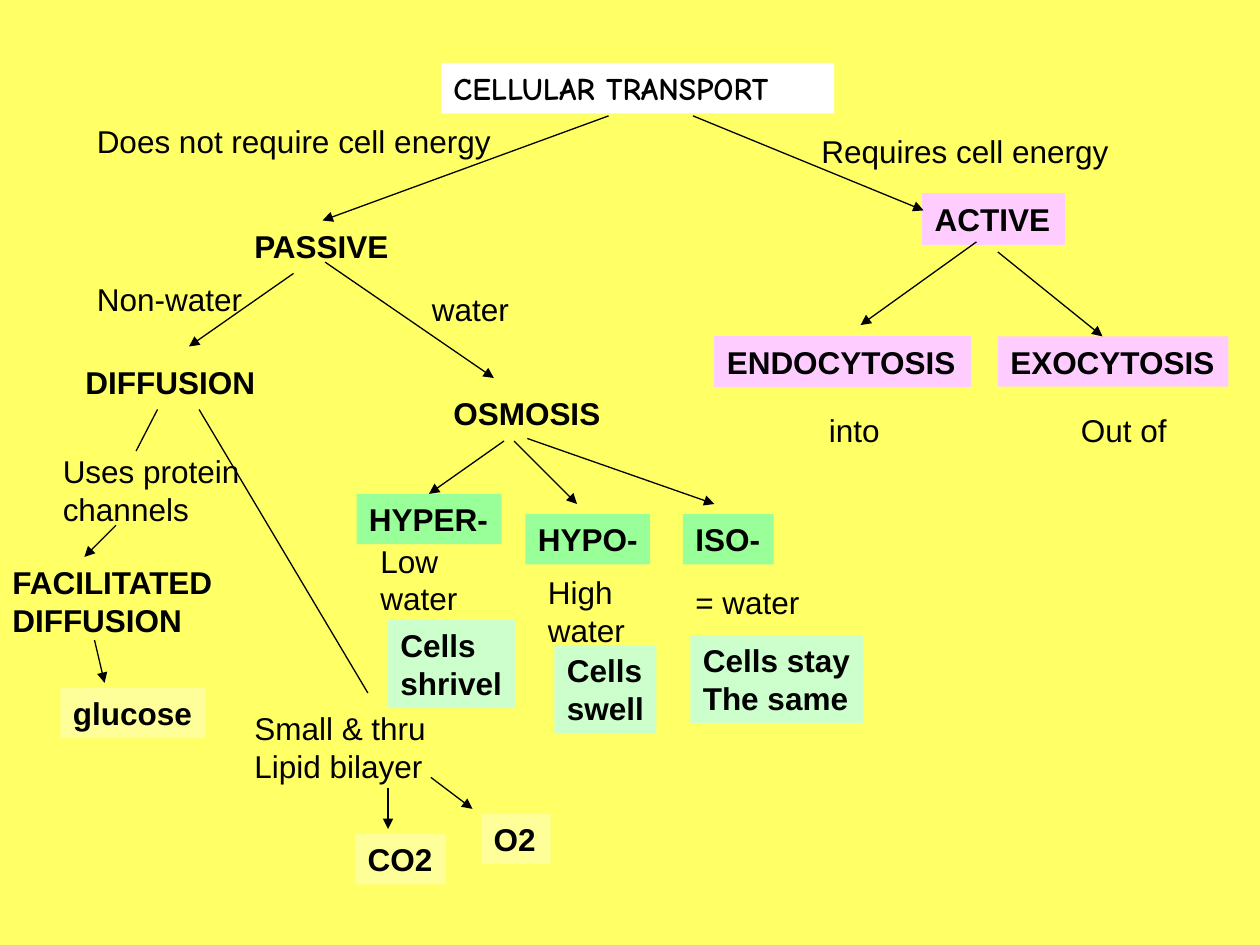
from collections import namedtuple

from lxml.etree import SubElement
from pptx import Presentation
from pptx.dml.color import RGBColor
from pptx.enum.shapes import MSO_CONNECTOR as Connector, MSO_SHAPE as Preset
from pptx.enum.text import MSO_ANCHOR as Anchor, MSO_AUTO_SIZE as AutoSize, PP_ALIGN as Align
from pptx.oxml.ns import qn
from pptx.util import Pt

PX = 9144  # one px is a hundredth of an inch
PAGE, WHITE, BLACK = "FFFF66", "FFFFFF", "000000"
PINK, GREEN, MINT, CREAM = "FFCCFF", "99FF99", "CCFFCC", "FFFF99"
LINE_HEIGHT, PADDING = 30, 10
TOP, BOTTOM = 0, 2  # connection sites of a rectangle

Box = namedtuple("Box", "left top width height")


def color(hex_value):
    return RGBColor.from_string(hex_value)


def write_text(shape, text, *, font="Arial", size=18, bold=False, ink=BLACK, wrap=False):
    frame = shape.text_frame
    frame.text = text
    frame.word_wrap = wrap
    frame.auto_size = AutoSize.SHAPE_TO_FIT_TEXT
    frame.vertical_anchor = Anchor.TOP
    for paragraph in frame.paragraphs:
        paragraph.alignment = Align.LEFT
        paragraph.font.name = font
        paragraph.font.size = Pt(size)
        paragraph.font.bold = bold
        paragraph.font.color.rgb = color(ink)


def add_note(slide, box, text, left, top, width):
    """Plain label without a fill; its height follows from its lines."""
    height = LINE_HEIGHT * len(text.split("\n")) + PADDING
    shape = slide.shapes.add_textbox(
        (box.left + left) * PX, (box.top + top) * PX, width * PX, height * PX)
    write_text(shape, text)
    return shape


def add_term(slide, box, text, left, top, width, fill=PAGE, outline=None, **text_format):
    """Bold term on a filled rectangle."""
    height = LINE_HEIGHT * len(text.split("\n")) + PADDING
    shape = slide.shapes.add_shape(
        Preset.RECTANGLE, (box.left + left) * PX, (box.top + top) * PX,
        width * PX, height * PX)
    shape.shadow.inherit = False
    shape.fill.solid()
    shape.fill.fore_color.rgb = color(fill)
    if outline:
        shape.line.color.rgb = color(outline)
        shape.line.width = Pt(0.75)
    else:
        shape.line.fill.background()
    write_text(shape, text, bold=True, **text_format)
    return shape


def add_link(slide, box, start, end, arrow=True):
    (x1, y1), (x2, y2) = start, end
    link = slide.shapes.add_connector(
        Connector.STRAIGHT, (box.left + x1) * PX, (box.top + y1) * PX,
        (box.left + x2) * PX, (box.top + y2) * PX)
    link.line.color.rgb = color(BLACK)
    link.line.width = Pt(0.75)
    if arrow:
        SubElement(link.line._get_or_add_ln(), qn("a:tailEnd"), type="triangle")
    SubElement(link._element.spPr, qn("a:effectLst"))
    return link


def add_title(slide, box):
    add_term(slide, box, "CELLULAR TRANSPORT", 0, 0, box.width, WHITE,
             font="Comic Neue", wrap=True)


def add_passive(slide, box):
    add_note(slide, box, "Does not require cell energy", 0, 0, 333)
    passive = add_term(slide, box, "PASSIVE", 125, 83, 128)
    add_note(slide, box, "Non-water", 0, 125, 135)
    add_note(slide, box, "water", 266, 133, 81)
    add_link(slide, box, (416, 0), (191, 83)).end_connect(passive, TOP)
    add_link(slide, box, (166, 125), (83, 183))
    add_link(slide, box, (191, 116), (325, 208))


def add_active(slide, box):
    add_note(slide, box, "Requires cell energy", 92, 8, 248)
    add_term(slide, box, "ACTIVE", 182, 62, 113, PINK, outline=PINK)
    add_term(slide, box, "ENDOCYTOSIS", 17, 175, 203, PINK, outline=PINK)
    add_term(slide, box, "EXOCYTOSIS", 242, 175, 183, PINK)
    add_note(slide, box, "into", 98, 229, 60)
    add_note(slide, box, "Out of", 298, 229, 88)
    add_link(slide, box, (0, 0), (183, 75))
    add_link(slide, box, (225, 100), (133, 166))
    add_link(slide, box, (242, 108), (325, 175))


def add_diffusion(slide, box):
    add_term(slide, box, "DIFFUSION", 58, 0, 155)
    # Through protein channels
    add_note(slide, box, "Uses protein\nchannels", 40, 71, 160)
    add_term(slide, box, "FACILITATED\nDIFFUSION", 0, 159, 184)
    add_term(slide, box, "glucose", 48, 263, 115, CREAM)
    add_link(slide, box, (125, 42), (108, 75), arrow=False)
    add_link(slide, box, (92, 134), (67, 159))
    add_link(slide, box, (75, 225), (83, 259))
    # Through the lipid bilayer
    add_note(slide, box, "Small & thru\nLipid bilayer", 192, 275, 156)
    add_term(slide, box, "CO2", 282, 379, 72, CREAM)
    add_term(slide, box, "O2", 382, 363, 55, CREAM)
    add_link(slide, box, (158, 42), (292, 267), arrow=False)
    add_link(slide, box, (308, 342), (308, 375))
    add_link(slide, box, (342, 334), (375, 359))


def add_osmosis(slide, box):
    osmosis = add_term(slide, box, "OSMOSIS", 67, 0, 137)
    # Kinds of solution
    hyper = add_term(slide, box, "HYPER-", 0, 84, 115, GREEN)
    add_term(slide, box, "HYPO-", 134, 100, 99, GREEN)
    add_term(slide, box, "ISO-", 259, 100, 72, GREEN)
    # Water level and effect on the cells
    add_note(slide, box, "Low\nwater", 9, 117, 81)
    add_note(slide, box, "High\nwater", 142, 142, 81)
    add_note(slide, box, "= water", 259, 150, 103)
    add_term(slide, box, "Cells\nshrivel", 25, 184, 101, MINT)
    add_term(slide, box, "Cells\nswell", 157, 204, 81, MINT)
    add_term(slide, box, "Cells stay\nThe same", 265, 196, 137, MINT)
    add_link(slide, box, (117, 42), (59, 84)).end_connect(hyper, TOP)
    add_link(slide, box, (125, 42), (175, 92))
    add_link(slide, box, (134, 42), (284, 92)).begin_connect(osmosis, BOTTOM)


def main():
    presentation = Presentation()
    presentation.slide_width = 1000 * PX
    presentation.slide_height = 750 * PX
    slide = presentation.slides.add_slide(presentation.slide_layouts[6])
    slide.background.fill.solid()
    slide.background.fill.fore_color.rgb = color(PAGE)

    add_title(slide, Box(350, 50, 312, 40))
    add_passive(slide, Box(67, 92, 416, 208))
    add_active(slide, Box(550, 92, 425, 269))
    add_diffusion(slide, Box(0, 283, 437, 419))
    add_osmosis(slide, Box(283, 308, 402, 274))
    presentation.save("out.pptx")


if __name__ == "__main__":
    main()
